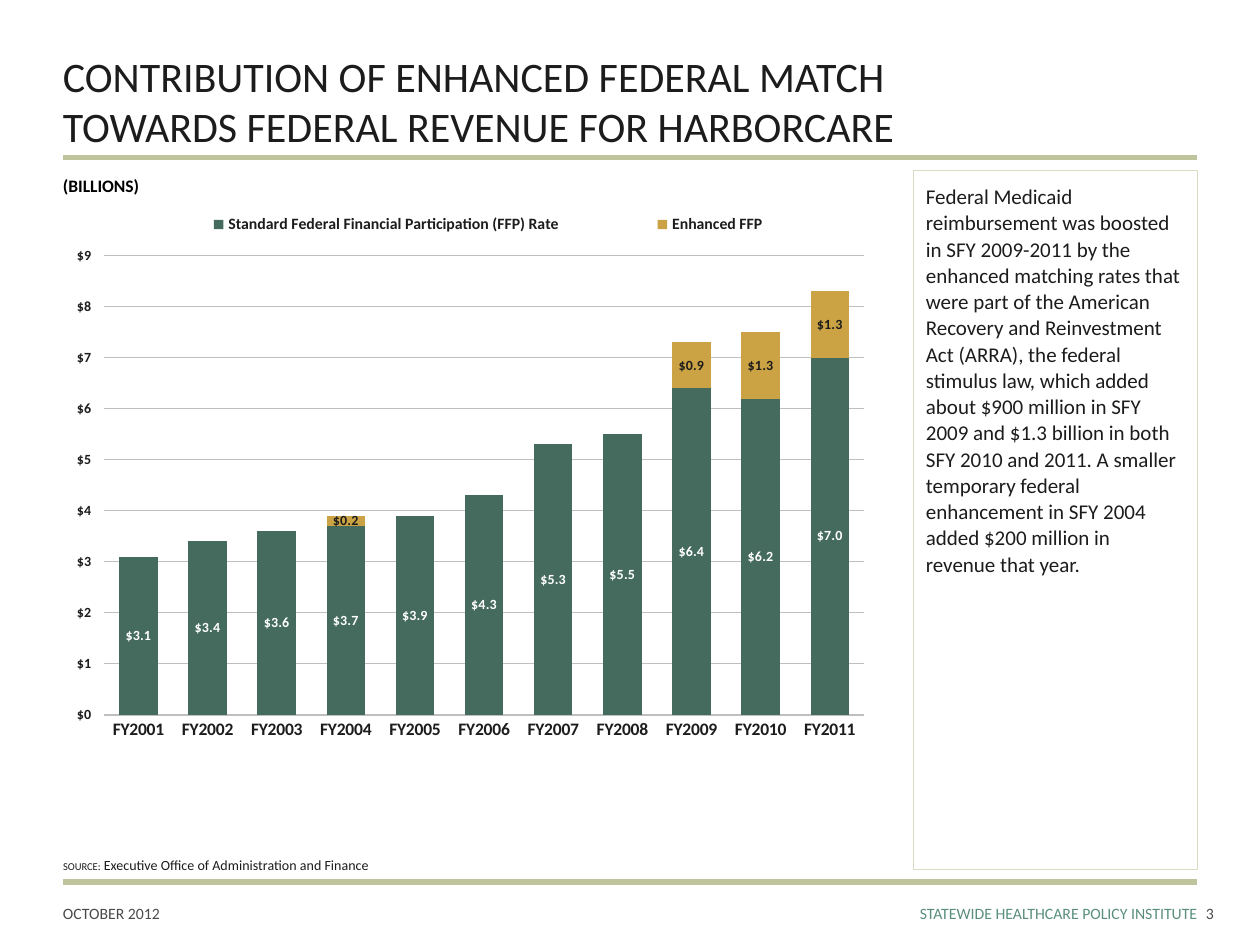
import pptx
import pptx.chart.data
import pptx.dml.color
import pptx.enum.chart
import pptx.enum.shapes
import pptx.enum.text
import pptx.oxml
import pptx.oxml.ns
import pptx.util

SLIDE_W, SLIDE_H = 10, 7.5
MARGIN = 0.05 * SLIDE_W
CONTENT_W = SLIDE_W - 2 * MARGIN
FOOTER_TOP, FOOTER_H = 7.17, 0.32
FONT = "Calibri"
INK, GRAY, BLACK, WHITE = "1C1C1C", "4B4B4B", "000000", "FFFFFF"
GREEN, GOLD, RULE, INSTITUTE = "446B5D", "CBA344", "BFC49D", "5A8F7C"
FLAT = (0, 0.05, 0, 0.05)

YEARS = [f"FY{year}" for year in range(2001, 2012)]
STANDARD = [3.1, 3.4, 3.6, 3.7, 3.9, 4.3, 5.3, 5.5, 6.4, 6.2, 7.0]
ENHANCED = [0, 0, 0, 0.2, 0, 0, 0, 0, 0.9, 1.3, 1.3]
COMMENTARY = (
    "Federal Medicaid reimbursement was boosted in SFY 2009-2011 by the enhanced "
    "matching rates that were part of the American Recovery and Reinvestment Act "
    "(ARRA), the federal stimulus law, which added about $900 million in SFY 2009 "
    "and $1.3 billion in both SFY 2010 and 2011. A smaller temporary federal "
    "enhancement in SFY 2004 added $200 million in revenue that year."
)


def rgb(hex_color):
    return pptx.dml.color.RGBColor.from_string(hex_color)


def inches(*lengths):
    return [pptx.util.Inches(length) for length in lengths]


def style_font(font, size, color=INK, bold=False):
    font.name = FONT
    font.size = pptx.util.Pt(size)
    font.bold = bold
    font.color.rgb = rgb(color)


def write(frame, text, size=9, color=INK, bold=False, align="LEFT",
          anchor="TOP", insets=(0, 0, 0, 0), wrap=True):
    """Append text to the frame's first paragraph; each newline is a line break."""
    frame.word_wrap = wrap
    frame.vertical_anchor = getattr(pptx.enum.text.MSO_ANCHOR, anchor)
    (frame.margin_left, frame.margin_top,
     frame.margin_right, frame.margin_bottom) = inches(*insets)
    paragraph = frame.paragraphs[0]
    paragraph.alignment = getattr(pptx.enum.text.PP_ALIGN, align)
    for index, line in enumerate(text.split("\n")):
        if index:
            paragraph.add_line_break()
        run = paragraph.add_run()
        run.text = line
        style_font(run.font, size, color, bold)
    return paragraph


def add_text(slide, box, text, **text_format):
    frame = slide.shapes.add_textbox(*inches(*box)).text_frame
    write(frame, text, **text_format)
    return frame


def add_rule(slide, y):
    rule = slide.shapes.add_connector(
        pptx.enum.shapes.MSO_CONNECTOR.STRAIGHT,
        *inches(MARGIN, y, SLIDE_W - MARGIN, y))
    rule.line.color.rgb = rgb(RULE)
    rule.line.width = pptx.util.Pt(3)
    rule._element.spPr.append(pptx.oxml.parse_xml(
        f"<a:effectLst {pptx.oxml.ns.nsdecls('a')}/>"))


def place(element, index, shares, inner=False):
    """Give a chart part a manual layout in shares of the chart's size."""
    for old in element.findall(pptx.oxml.ns.qn("c:layout")):
        element.remove(old)
    x, y, w, h = shares
    target = '<c:layoutTarget val="inner"/>' if inner else ""
    element.insert(index, pptx.oxml.parse_xml(
        f"<c:layout {pptx.oxml.ns.nsdecls('c')}><c:manualLayout>{target}"
        '<c:xMode val="edge"/><c:yMode val="edge"/>'
        f'<c:x val="{x}"/><c:y val="{y}"/><c:w val="{w}"/><c:h val="{h}"/>'
        "</c:manualLayout></c:layout>"))


def style_series(series, fill, label_color):
    series.format.fill.solid()
    series.format.fill.fore_color.rgb = rgb(fill)
    labels = series.data_labels
    labels.show_value = True
    labels.number_format = '"$"#,##0.0;;'  # zero values stay unlabelled
    labels.number_format_is_linked = False
    style_font(labels.font, 8, label_color, bold=True)


def style_axes(chart):
    ticks = pptx.enum.chart.XL_TICK_MARK
    years, dollars = chart.category_axis, chart.value_axis
    for axis, size, tick in ((years, 10, ticks.NONE), (dollars, 8, ticks.CROSS)):
        axis.major_tick_mark = tick
        axis.minor_tick_mark = ticks.NONE
        axis.format.line.fill.background()
        style_font(axis.tick_labels.font, size, bold=True)
    dollars.minimum_scale, dollars.maximum_scale, dollars.major_unit = 0, 9, 1
    dollars.tick_labels.number_format = '"$"#,##0'
    dollars.tick_labels.number_format_is_linked = False
    dollars.major_gridlines.format.line.color.rgb = rgb("BFBFBF")
    dollars.major_gridlines.format.line.width = pptx.util.Pt(0.75)


def add_revenue_chart(slide, box):
    data = pptx.chart.data.CategoryChartData()
    data.categories = YEARS
    data.add_series("Standard Federal Financial Participation (FFP) Rate", STANDARD)
    data.add_series("Enhanced FFP", ENHANCED)
    chart = slide.shapes.add_chart(
        pptx.enum.chart.XL_CHART_TYPE.COLUMN_STACKED, *inches(*box), data).chart
    style_font(chart.font, 8, bold=True)
    chart.has_title = False
    chart.has_legend = True
    chart.legend.position = pptx.enum.chart.XL_LEGEND_POSITION.TOP
    chart.legend.include_in_layout = False
    style_font(chart.legend.font, 9, bold=True)
    style_axes(chart)
    plot = chart.plots[0]
    plot.gap_width, plot.overlap, plot.vary_by_categories = 80, 100, False
    for series, fill, label_color in zip(plot.series, (GREEN, GOLD), (WHITE, INK)):
        style_series(series, fill, label_color)
    place(chart._chartSpace.chart.plotArea, 0, (0.05, 0.1, 0.93, 0.81), inner=True)
    place(chart.legend._element, 1, (0.07, 0.02, 0.9, 0.05))


def add_commentary(slide, box):
    panel = slide.shapes.add_shape(
        pptx.enum.shapes.MSO_SHAPE.RECTANGLE, *inches(*box))
    panel.shadow.inherit = False
    panel.fill.background()
    panel.line.color.rgb = rgb("D9DCC4")
    panel.line.width = pptx.util.Pt(0.25)
    paragraph = write(panel.text_frame, COMMENTARY, size=12,
                      insets=(0.1, 0.1, 0.1, 0.05))
    paragraph.line_spacing = pptx.util.Pt(15)
    paragraph.space_before = pptx.util.Pt(6)


def add_source(slide, box):
    frame = add_text(slide, box, "SOURCE", size=6, anchor="BOTTOM", insets=FLAT)
    for text, size, color in ((":", 6, BLACK), (" ", 8, BLACK),
                              ("Executive Office of Administration and Finance", 8, INK)):
        write(frame, text, size=size, color=color, anchor="BOTTOM", insets=FLAT)


def add_footer(slide):
    add_text(slide, (MARGIN, FOOTER_TOP, 1, FOOTER_H), "OCTOBER 2012", color=GRAY)
    add_text(slide, (5.19, FOOTER_TOP, 4.31, FOOTER_H),
             "STATEWIDE HEALTHCARE POLICY INSTITUTE", color=INSTITUTE, align="RIGHT")
    add_text(slide, (9.57, FOOTER_TOP, 0.43, FOOTER_H), "3", color=GRAY)


def main():
    deck = pptx.Presentation()
    deck.slide_width, deck.slide_height = inches(SLIDE_W, SLIDE_H)
    slide = deck.slides.add_slide(deck.slide_layouts[6])
    for y in (1.25, 7):
        add_rule(slide, y)
    add_footer(slide)
    add_text(slide, (MARGIN, 0.38, CONTENT_W, 0.87),
             "CONTRIBUTION OF ENHANCED FEDERAL MATCH\n"
             "TOWARDS FEDERAL REVENUE FOR HARBORCARE",
             size=24, anchor="BOTTOM", insets=FLAT)
    add_source(slide, (MARGIN, 6.74, 6.48, 0.24))
    add_text(slide, (MARGIN, 1.34, 4.9, 0.27), "(BILLIONS)",
             size=10, color=BLACK, bold=True, insets=FLAT, wrap=False)
    add_revenue_chart(slide, (MARGIN, 1.58, 6.49, 4.5))
    add_commentary(slide, (7.25, 1.35, CONTENT_W / 4, 5.55))
    deck.save("out.pptx")


if __name__ == "__main__":
    main()
